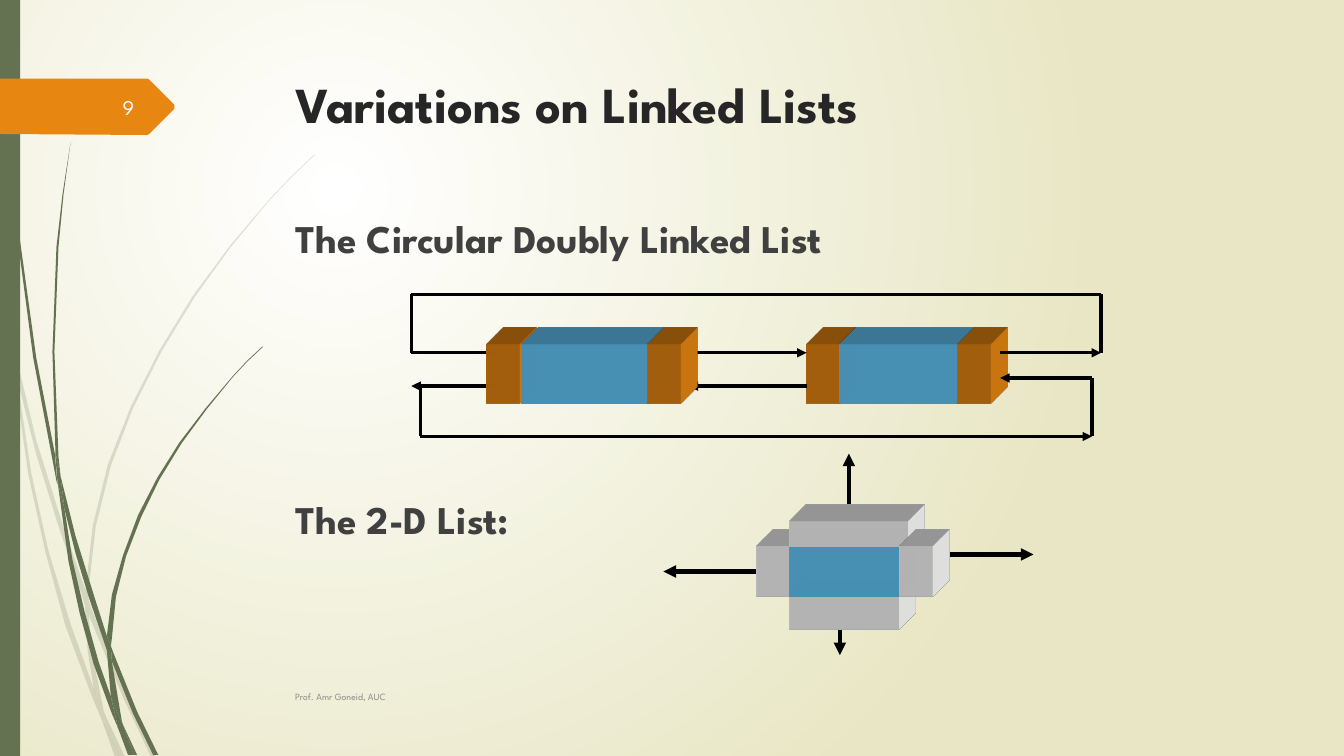
import dataclasses

import lxml.etree
import pptx
import pptx.dml.color
import pptx.enum.shapes
import pptx.enum.text
import pptx.oxml
import pptx.oxml.ns
import pptx.util

PX = 9144
qn = pptx.oxml.ns.qn


@dataclasses.dataclass(frozen=True)
class Theme:
    """Colours as RRGGBB and type sizes in points."""
    font: str = "League Spartan"
    title: str = "262626"
    body: str = "404040"
    footer: str = "8C8C8C"
    number: str = "FEFFFF"
    green: str = "647252"
    orange: str = "E78712"
    blue: str = "66CCFF"
    white: str = "FFFFFF"
    line: str = "000000"
    glow: tuple = ("FFFFFF", "E8E6C4")
    title_size: float = 36
    body_size: float = 28
    number_size: float = 15
    footer_size: float = 6.8


THEME = Theme()

BACK_STEMS = [
    [(11, 350), (9, 322), (0, 282), (0, 299), (10, 344)],
    [(58, 522), (84, 599), (85, 586), (62, 520), (36, 437), (14, 345),
     (17, 376), (36, 451)],
    [(92, 607), (88, 596), (88, 610), (123, 694), (150, 751), (155, 751),
     (127, 692)],
    [(119, 751), (124, 751), (105, 711)],
    [(93, 683), (70, 619), (48, 546), (31, 469), (17, 376), (11, 350),
     (28, 470), (45, 547), (65, 621), (92, 693), (101, 714), (99, 707)],
    [(84, 599), (87, 646), (93, 683), (96, 692), (105, 711), (103, 706),
     (91, 646), (88, 610), (88, 608)],
    [(88, 584), (95, 522), (110, 462), (132, 405), (160, 349), (193, 295),
     (229, 245), (268, 198), (290, 175), (312, 154), (312, 153), (289, 175),
     (268, 197), (228, 244), (191, 294), (158, 348), (130, 403), (107, 461),
     (92, 522), (85, 584), (85, 586), (88, 596)],
    [(101, 714), (114, 751), (119, 751)],
    [(88, 608), (88, 610), (88, 596), (85, 586), (84, 599)],
    [(96, 692), (93, 683), (99, 707), (101, 714), (119, 751), (105, 711)],
]
FRONT_STEMS = [
    [(7, 110), (17, 233), (33, 355), (56, 477), (57, 481), (55, 457),
     (55, 453), (36, 355), (19, 232), (8, 109), (5, 48), (4, 0), (3, 0),
     (4, 48)],
    [(88, 592), (106, 645), (106, 633), (106, 631), (93, 590), (75, 532),
     (60, 472), (64, 505), (75, 549)],
    [(113, 649), (110, 641), (111, 656), (132, 708), (152, 749), (157, 749),
     (136, 706)],
    [(110, 691), (98, 657), (84, 607), (72, 556), (64, 505), (57, 477),
     (68, 557), (79, 608), (93, 659), (111, 708), (117, 722), (116, 717)],
    [(60, 472), (58, 453), (54, 349), (58, 245), (63, 193), (70, 141),
     (62, 193), (56, 245), (52, 349), (55, 449)],
    [(133, 749), (136, 749), (122, 719)],
    [(57, 477), (64, 505), (60, 472), (55, 449), (55, 453)],
    [(111, 633), (115, 592), (125, 552), (140, 513), (158, 476), (180, 440),
     (205, 406), (231, 374), (245, 359), (261, 344), (260, 344), (245, 358),
     (231, 373), (204, 405), (178, 439), (156, 474), (137, 511), (122, 551),
     (111, 590), (106, 631), (110, 641)],
    [(117, 722), (127, 749), (131, 749)],
    [(106, 645), (110, 691), (116, 706), (122, 719), (121, 716), (111, 656),
     (109, 651)],
    [(106, 645), (109, 651), (111, 656), (110, 641), (106, 631), (106, 633)],
    [(116, 706), (110, 691), (116, 717), (117, 722), (130, 749), (133, 749),
     (122, 719)],
]
BADGE = [(0, 78), (146, 78), (148, 79), (173, 104), (173, 108), (148, 133),
         (146, 134), (0, 133)]
LIST_ROUTES = [
    [(683, 350), (800, 350)],
    [(992, 350), (1092, 350)],
    [(1092, 350), (1092, 292), (408, 292), (408, 350), (492, 350)],
    [(800, 383), (683, 383)],
    [(492, 383), (408, 383)],
    [(417, 383), (417, 433), (1083, 433)],
    [(1083, 433), (1083, 375), (992, 375)],
]
GRID_ROUTES = [
    [(942, 550), (1025, 550)],
    [(750, 567), (658, 567)],
    [(842, 500), (842, 450)],
    [(833, 625), (833, 650)],
]


def rgb(value):
    """Turn RRGGBB into a colour."""
    return pptx.dml.color.RGBColor.from_string(value)


def emu(*lengths):
    """Turn px into EMU."""
    return [pptx.util.Emu(v * PX) for v in lengths]


def add_node(parent, tag, **attributes):
    """Add a drawing element under an XML parent."""
    return lxml.etree.SubElement(parent, qn(tag), attrib=attributes)


def paint(sp, color, alpha=100):
    """Give a shape a flat fill without line or shadow."""
    sp.shadow.inherit = False
    sp.fill.solid()
    sp.fill.fore_color.rgb = rgb(color)
    sp.line.fill.background()
    if alpha < 100:
        fill = sp.fill.fore_color._xFill.find(qn("a:srgbClr"))
        add_node(fill, "a:alpha", val=str(alpha * 1000))


def add_box(s, box, color):
    """Add a flat rectangle."""
    sp = s.shapes.add_shape(
        pptx.enum.shapes.MSO_SHAPE.RECTANGLE, *emu(*box))
    paint(sp, color)
    return sp


def add_cell(s, box, color):
    """Add a rectangle extruded to the top right."""
    spPr = add_box(s, box, color)._element.spPr
    scene = add_node(spPr, "a:scene3d")
    add_node(scene, "a:camera", prst="legacyObliqueTopRight")
    add_node(scene, "a:lightRig", rig="legacyFlat3", dir="b")
    solid = add_node(spPr, "a:sp3d", extrusionH="430200",
                     prstMaterial="legacyMatrix")
    for bevel in ("a:bevelT", "a:bevelB"):
        add_node(solid, bevel, w="13500", h="13500", prst="angle")
    add_node(add_node(solid, "a:extrusionClr"), "a:srgbClr", val=color)


def add_polygon(s, points, color, alpha=100):
    """Add a closed outline."""
    builder = s.shapes.build_freeform(*points[0], scale=PX)
    builder.add_line_segments(points[1:], close=True)
    paint(builder.convert_to_shape(), color, alpha)


def add_route(s, points, weight):
    """Join points by straight lines, with an arrowhead at the end."""
    for start, end in zip(points, points[1:]):
        line = s.shapes.add_connector(
            pptx.enum.shapes.MSO_CONNECTOR.STRAIGHT, *emu(*start, *end))
        line.line.color.rgb = rgb(THEME.line)
        line.line.width = pptx.util.Pt(weight)
        add_node(line._element.spPr, "a:effectLst")
    add_node(line.line._ln, "a:tailEnd", type="triangle")


def write(p, text, size, color, bold=False, align="LEFT", before=0):
    """Write one formatted paragraph."""
    p.alignment = getattr(pptx.enum.text.PP_ALIGN, align)
    p.space_before = pptx.util.Pt(before)
    r = p.add_run()
    r.text = text
    r.font.name = THEME.font
    r.font.size = pptx.util.Pt(size)
    r.font.bold = bold
    r.font.color.rgb = rgb(color)


def set_frame(sp, box, anchor):
    """Place a text shape and return its frame."""
    sp.left, sp.top, sp.width, sp.height = emu(*box)
    tf = sp.text_frame
    tf.word_wrap = True
    tf.auto_size = pptx.enum.text.MSO_AUTO_SIZE.NONE
    tf.vertical_anchor = getattr(pptx.enum.text.MSO_ANCHOR, anchor)
    return tf


def add_label(s, box, text, size, color, **style):
    """Add a one-line text box."""
    tf = set_frame(s.shapes.add_textbox(*emu(*box)), box, "MIDDLE")
    write(tf.paragraphs[0], text, size, color, **style)


def add_background(s):
    """Fill the background with a radial glow."""
    fill = s.background.fill
    fill.gradient()
    for stop, color in zip(fill.gradient_stops, THEME.glow):
        stop.color.rgb = rgb(color)
    grad = s.background._cSld.find(".//" + qn("a:gradFill"))
    grad.remove(grad.find(qn("a:lin")))
    add_node(add_node(grad, "a:path", path="circle"), "a:fillToRect",
             l="25000", t="25000", r="75000", b="75000")


def add_decoration(s):
    """Add the stems, the side bar and the page badge."""
    for stems, alpha in ((BACK_STEMS, 20), (FRONT_STEMS, 100)):
        for points in stems:
            add_polygon(s, points, THEME.green, alpha)
    add_box(s, (0, 0, 20, 750), THEME.green)
    add_polygon(s, BADGE, THEME.orange)


def add_text(s):
    """Fill the placeholders and add the footer and page number."""
    title, body = s.placeholders
    tf = set_frame(title, (283, 68, 975, 140), "TOP")
    write(tf.paragraphs[0], "Variations on Linked Lists",
          THEME.title_size, THEME.title, bold=True)
    tf = set_frame(body, (283, 208, 975, 463), "TOP")
    headings = (("The Circular Doubly Linked List", 0), ("The 2-D List:", 167))
    for i, (text, before) in enumerate(headings):
        p = tf.add_paragraph() if i else tf.paragraphs[0]
        write(p, text, THEME.body_size, THEME.body, bold=True, before=before)
        pPr = p._p.get_or_add_pPr()
        pPr.set("marL", "0")
        pPr.set("indent", "0")
        add_node(pPr, "a:buNone")
    add_label(s, (283, 671, 833, 40), "Prof. Amr Goneid, AUC",
              THEME.footer_size, THEME.footer)
    add_label(s, (58, 86, 85, 40), "9", THEME.number_size, THEME.number,
              align="RIGHT")


def add_list_node(s, lefts, data_width):
    """Add a doubly linked node: link, data, link."""
    widths = (33, data_width, 33)
    colors = (THEME.orange, THEME.blue, THEME.orange)
    for left, width, color in zip(lefts, widths, colors):
        add_cell(s, (left, 342, width, 58), color)


def add_circular_list(s):
    """Draw the circular doubly linked list."""
    add_list_node(s, (800, 833, 950), 117)
    for points in LIST_ROUTES:
        add_route(s, points, 2.25)
    add_list_node(s, (483, 517, 642), 125)


def add_grid_node(s):
    """Draw the node of the 2-D list with its four links."""
    add_cell(s, (783, 592, 108, 33), THEME.white)
    add_cell(s, (750, 542, 33, 50), THEME.white)
    add_cell(s, (783, 542, 108, 50), THEME.blue)
    for points in GRID_ROUTES:
        add_route(s, points, 3)
    add_cell(s, (783, 517, 117, 25), THEME.white)
    add_cell(s, (892, 542, 33, 50), THEME.white)


def main():
    """Build and save the slide."""
    prs = pptx.Presentation()
    prs.slide_width, prs.slide_height = emu(1333, 750)
    s = prs.slides.add_slide(prs.slide_layouts[1])
    add_background(s)
    add_decoration(s)
    add_text(s)
    add_circular_list(s)
    add_grid_node(s)
    prs.save("out.pptx")


if __name__ == "__main__":
    main()
